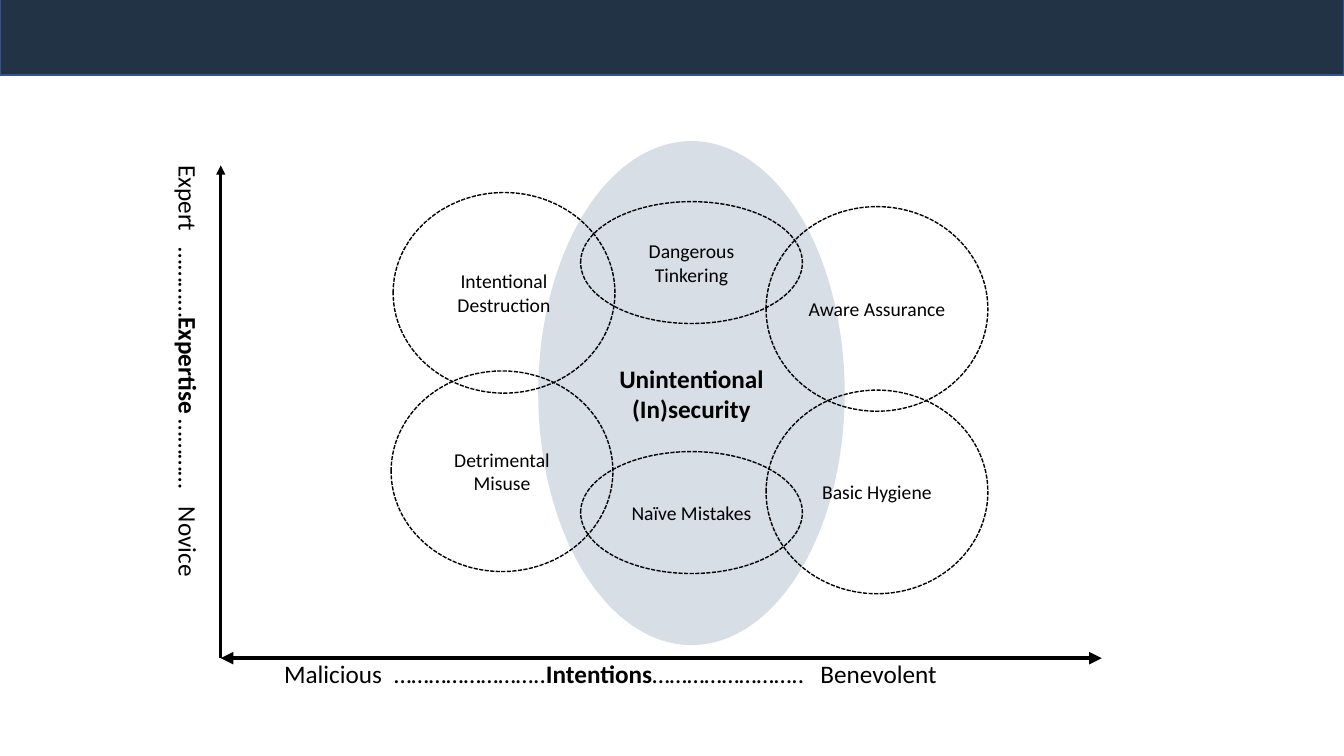
"""Build the slide that maps security behaviours by intention and expertise."""
from dataclasses import dataclass

from lxml import etree
from pptx import Presentation
from pptx.dml.color import RGBColor
from pptx.enum.dml import MSO_LINE
from pptx.enum.shapes import MSO_CONNECTOR, MSO_SHAPE
from pptx.enum.text import MSO_ANCHOR, PP_ALIGN
from pptx.oxml.ns import qn
from pptx.util import Inches, Pt

OVAL, RECT = MSO_SHAPE.OVAL, MSO_SHAPE.RECTANGLE
STRAIGHT = MSO_CONNECTOR.STRAIGHT
DASH = MSO_LINE.SQUARE_DOT
LEFT, CENTER = PP_ALIGN.LEFT, PP_ALIGN.CENTER
TOP, MIDDLE = MSO_ANCHOR.TOP, MSO_ANCHOR.MIDDLE

SLIDE_W, SLIDE_H = Inches(13.33), Inches(7.5)
COLS, ROWS = 40, 30
BUBBLE_W = 6.6
ORIGIN = (6.57, 26.12)

BUBBLES = [
    ("Intentional Destruction", 11.7, 7.64, 7.96),
    ("Detrimental Misuse", 11.64, 14.72, 7.96),
    ("Aware Assurance", 22.8, 8.2, 8.12),
    ("Basic Hygiene", 22.8, 15.48, 8.08),
    ("Dangerous Tinkering", 17.28, 8, 4.84),
    ("Naïve Mistakes", 17.28, 17.92, 4.84),
]


@dataclass(frozen=True)
class Theme:
    """Colours, font and type sizes of the slide."""
    band: str = "223346"
    band_line: str = "325491"
    core: str = "D6DCE5"
    ink: str = "000000"
    font: str = "Calibri"
    large: int = 18
    small: int = 14


THEME = Theme()


def col(n):
    """Return the length of n grid columns."""
    return round(SLIDE_W * n / COLS)


def row(n):
    """Return the length of n grid rows."""
    return round(SLIDE_H * n / ROWS)


def rgb(code):
    """Return a colour from its hex code."""
    return RGBColor.from_string(code)


def add_text(sp, runs, size=THEME.large, align=LEFT, anchor=TOP, margin=0.1, tabs=()):
    """Write (text, bold) runs in one paragraph with tab stops in inches."""
    tf = sp.text_frame
    tf.word_wrap = True
    tf.vertical_anchor = anchor
    tf.margin_left = tf.margin_right = Inches(margin)
    p = tf.paragraphs[0]
    p.alignment = align
    if tabs:
        stops = etree.SubElement(p._p.get_or_add_pPr(), qn("a:tabLst"))
        for stop in tabs:
            etree.SubElement(stops, qn("a:tab"), pos=str(Inches(stop)), algn="l")
    for text, bold in runs:
        r = p.add_run()
        r.text = text
        r.font.name, r.font.size, r.font.bold = THEME.font, Pt(size), bold
        r.font.color.rgb = rgb(THEME.ink)


def add_figure(s, kind, x, y, w, h, fill=None, line=None, dash=None, alpha=None):
    """Add a preset shape placed on the grid."""
    sp = s.shapes.add_shape(kind, col(x), row(y), col(w), row(h))
    sp.shadow.inherit = False
    if fill:
        sp.fill.solid()
        sp.fill.fore_color.rgb = rgb(fill)
    else:
        sp.fill.background()
    if alpha:
        color = sp.fill._xPr.find(".//" + qn("a:srgbClr"))
        etree.SubElement(color, qn("a:alpha"), val=str(alpha * 1000))
    if line:
        sp.line.color.rgb = rgb(line)
        sp.line.width = Pt(1)
        sp.line.dash_style = dash
    else:
        sp.line.fill.background()
    return sp


def add_axis(s, end, width, arrows):
    """Add an axis from the origin with triangles at the named ends."""
    (x1, y1), (x2, y2) = ORIGIN, end
    axis = s.shapes.add_connector(STRAIGHT, col(x1), row(y1), col(x2), row(y2))
    axis.line.color.rgb = rgb(THEME.ink)
    axis.line.width = Pt(width)
    ln = axis.line._get_or_add_ln()
    for arrow in arrows:
        etree.SubElement(ln, qn("a:" + arrow), type="triangle")
    etree.SubElement(axis._element.spPr, qn("a:effectLst"))


def add_axis_label(s, x, y, w, runs, tabs, rotation=0):
    """Add the one-line label of an axis."""
    sp = s.shapes.add_textbox(col(x), row(y), col(w), row(1.92))
    sp.rotation = rotation
    add_text(sp, runs, tabs=tabs)


def main():
    """Build and save the slide."""
    prs = Presentation()
    prs.slide_width, prs.slide_height = SLIDE_W, SLIDE_H
    s = prs.slides.add_slide(prs.slide_layouts[6])

    add_figure(s, RECT, 0, -0.14, COLS, 3.12, THEME.band, THEME.band_line)
    core = add_figure(s, OVAL, 16.02, 5.6, 9.12, 20, THEME.core, alpha=94)
    add_text(core, [("Unintentional (In)security", True)],
             align=CENTER, anchor=MIDDLE)
    for name, x, y, h in BUBBLES:
        bubble = add_figure(s, OVAL, x, y, BUBBLE_W, h, line=THEME.ink, dash=DASH)
        add_text(bubble, [(name, False)], THEME.small, CENTER, MIDDLE, margin=0.05)

    add_axis(s, (ORIGIN[0], 6.56), 2.25, ["tailEnd"])
    add_axis(s, (32.79, ORIGIN[1]), 3, ["headEnd", "tailEnd"])
    add_axis_label(s, 8.16, 25.92, 24.09,
                   [("Malicious\t……………………..", False), ("Intentions", True),
                    ("……………………..\tBenevolent", False)], tabs=(1.09, 5.32))
    add_axis_label(s, -2.13, 15.36, 15.24,
                   [("Expert\t…………", False), ("Expertise", True),
                    (" …………\tNovice", False)], tabs=(0.82, 3.39), rotation=90)
    prs.save("out.pptx")


if __name__ == "__main__":
    main()
